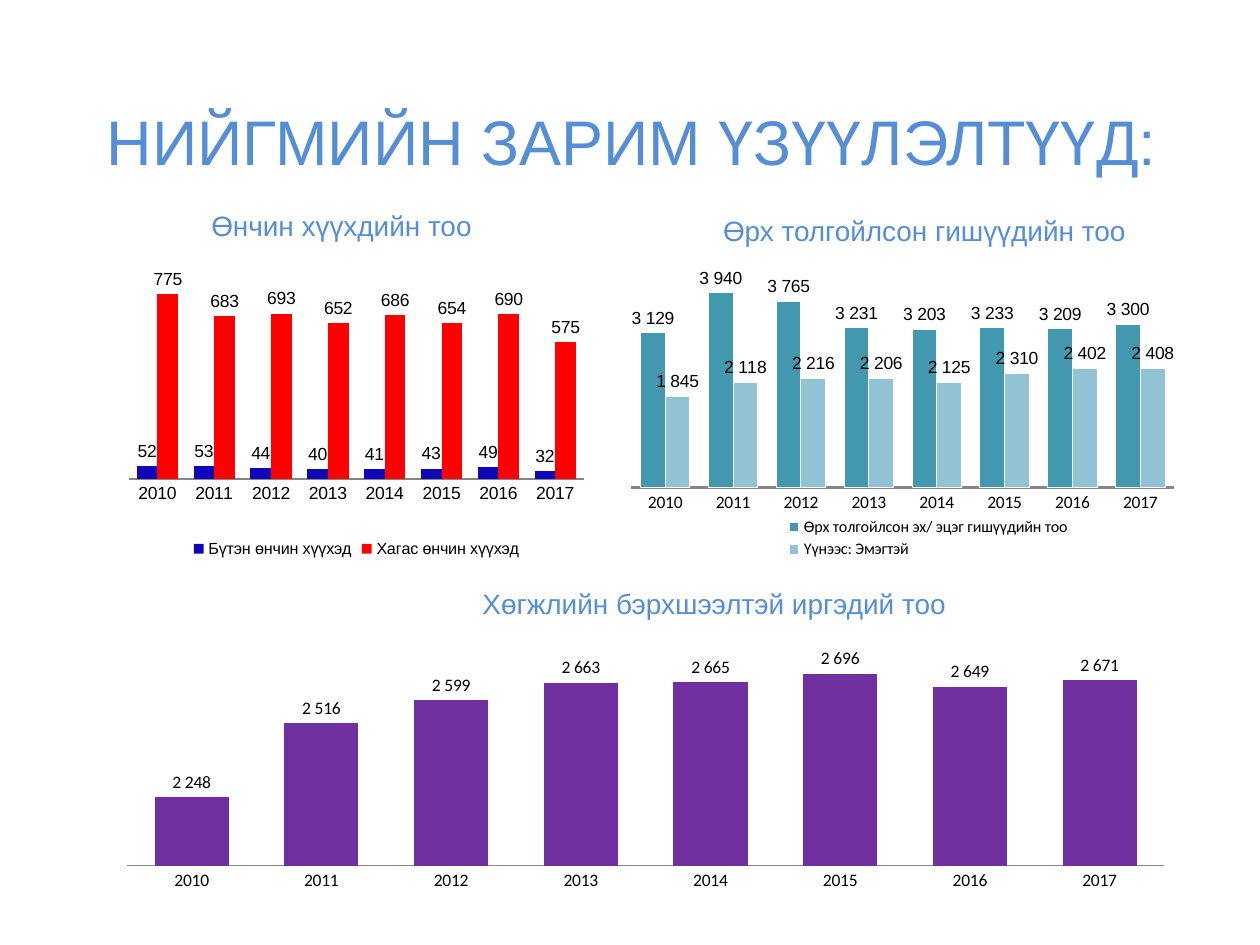
from pptx import Presentation
from pptx import oxml
from pptx.chart import data as chart_data
from pptx.dml import color as dml
from pptx.enum import chart as charts, text
from pptx.oxml import ns
from pptx.util import Cm, Pt

COLORS = {
    "heading": "558ED5", "text": "000000", "axis": "868686", "white": "FFFFFF",
    "full_orphans": "0F06BA", "half_orphans": "FF0000",
    "heads": "4198AF", "women": "91C3D5", "disabled": "7030A0",
}
YEARS = [str(year) for year in range(2010, 2018)]
THOUSANDS = r"#\ ##0"


def rgb(name):
    return dml.RGBColor.from_string(COLORS[name])


def style_font(font, face, size, color="text"):
    font.name, font.size, font.bold = face, Pt(size), False
    font.color.rgb = rgb(color)


def style_heading(frame, wording, size, align):
    frame.text = wording
    frame.word_wrap = True
    frame.vertical_anchor = text.MSO_ANCHOR.MIDDLE
    paragraph = frame.paragraphs[0]
    paragraph.alignment = align
    style_font(paragraph.font, "Arial", size, "heading")


def set_layout(element, box, inner=False):
    """Fix a plot area or legend at fractions of its chart."""
    target = '<c:layoutTarget val="inner"/>' if inner else ""
    modes = '<c:xMode val="edge"/><c:yMode val="edge"/>'
    sizes = "".join(f'<c:{key} val="{value}"/>' for key, value in zip("xywh", box))
    layout = oxml.parse_xml(
        f'<c:layout {ns.nsdecls("c")}><c:manualLayout>{target}{modes}{sizes}'
        "</c:manualLayout></c:layout>")
    for old in element.findall(ns.qn("c:layout")):
        element.remove(old)
    position = element.find(ns.qn("c:legendPos"))
    if position is None:
        element.insert(0, layout)
    else:
        position.addnext(layout)


def add_title(slide, box):
    title = slide.shapes.title
    title.left, title.top, title.width, title.height = map(Cm, box)
    style_heading(title.text_frame, "НИЙГМИЙН ЗАРИМ ҮЗҮҮЛЭЛТҮҮД:", 36, text.PP_ALIGN.LEFT)


def add_indicator(slide, box, wording, heading, chart_top, series, scale, plot_box,
                  align=text.PP_ALIGN.CENTER, number_format="General", axis_face="Calibri",
                  label_face="Arial", legend=True, legend_box=None, outline=None, axis_width=0.75):
    """Heading over a column chart; heading is (offset, width, height) in the box."""
    left, top, width, height = box
    offset, heading_width, heading_height = heading

    # Heading
    caption = slide.shapes.add_textbox(
        Cm(left + offset), Cm(top), Cm(heading_width), Cm(heading_height))
    style_heading(caption.text_frame, wording, 16, align)

    # Chart
    data = chart_data.CategoryChartData(number_format=number_format)
    data.categories = YEARS
    for name, values, _ in series:
        data.add_series(name, values)
    chart = slide.shapes.add_chart(
        charts.XL_CHART_TYPE.COLUMN_CLUSTERED, Cm(left), Cm(top + chart_top),
        Cm(width), Cm(height - chart_top), data).chart
    style_font(chart.font, "Calibri", 10)
    chart.has_title = False
    plot = chart.plots[0]
    plot.gap_width, plot.overlap, plot.vary_by_categories = 75, 0, False
    set_layout(chart._chartSpace.chart.plotArea, plot_box, inner=True)

    # Columns and their values
    for column, (_, _, color) in zip(plot.series, series):
        column.format.fill.solid()
        column.format.fill.fore_color.rgb = rgb(color)
        if outline:
            column.format.line.color.rgb = rgb(outline)
        labels = column.data_labels
        labels.show_value = True
        labels.number_format, labels.number_format_is_linked = number_format, False
        labels.position = charts.XL_LABEL_POSITION.OUTSIDE_END
        style_font(labels.font, label_face, 10)

    # Axes
    years, amounts = chart.category_axis, chart.value_axis
    years.major_tick_mark = charts.XL_TICK_MARK.NONE
    years.format.line.color.rgb = rgb("axis")
    years.format.line.width = Pt(axis_width)
    style_font(years.tick_labels.font, axis_face, 10)
    amounts.minimum_scale, amounts.maximum_scale = scale
    amounts.has_major_gridlines = False
    amounts.visible = False

    # Legend
    chart.has_legend = legend
    if legend:
        chart.legend.position = charts.XL_LEGEND_POSITION.BOTTOM
        chart.legend.include_in_layout = False
        style_font(chart.legend.font, axis_face, 9.2)
        if legend_box:
            set_layout(chart.legend._element, legend_box)


def main():
    deck = Presentation()
    deck.slide_width, deck.slide_height = Cm(25.4), Cm(19.05)
    slide = deck.slides.add_slide(deck.slide_layouts[5])
    add_title(slide, (1.9, 1.7, 22.23, 2.24))

    # Orphans
    add_indicator(
        slide, (2.31, 4.01, 9.75, 7.34), "Өнчин хүүхдийн тоо", (1.7, 6.55, 1.07), 1.07,
        [("Бүтэн өнчин хүүхэд", (52, 53, 44, 40, 41, 43, 49, 32), "full_orphans"),
         ("Хагас өнчин хүүхэд", (775, 683, 693, 652, 686, 654, 690, 575), "half_orphans")],
        (0, 900), (0.03, 0.04, 0.94, 0.69), align=text.PP_ALIGN.LEFT, axis_face="Arial")

    # Single heads of household
    add_indicator(
        slide, (12.7, 4.01, 11.43, 7.34), "Өрх толгойлсон гишүүдийн тоо", (1.07, 9.73, 1.27), 0.71,
        [("Өрх толгойлсон эх/ эцэг гишүүдийн тоо",
          (3129, 3940, 3765, 3231, 3203, 3233, 3209, 3300), "heads"),
         ("Үүнээс: Эмэгтэй", (1845, 2118, 2216, 2206, 2125, 2310, 2402, 2408), "women")],
        (0, 5000), (0, 0.02, 0.96, 0.75), number_format=THOUSANDS,
        legend_box=(0.25, 0.85, 0.55, 0.15), outline="white", axis_width=1.5)

    # People with disabilities
    add_indicator(
        slide, (2.34, 11.63, 21.79, 6.55), "Хөгжлийн бэрхшээлтэй иргэдий тоо", (5.71, 12.7, 1.07), 1.37,
        [("Series 1", (2248, 2516, 2599, 2663, 2665, 2696, 2649, 2671), "disabled")],
        (2000, 2800), (0.01, 0, 0.96, 0.86), number_format=THOUSANDS,
        label_face="Calibri", legend=False)

    deck.save("out.pptx")


if __name__ == "__main__":
    main()
